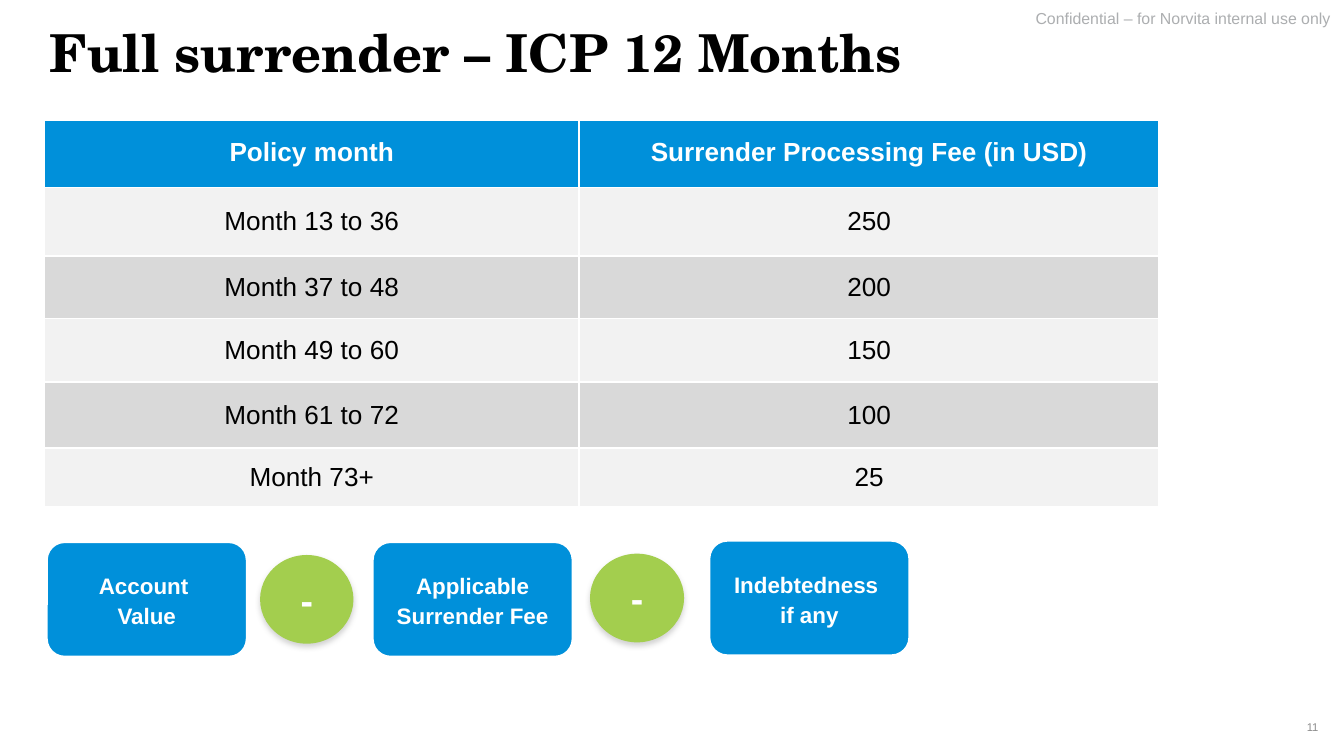
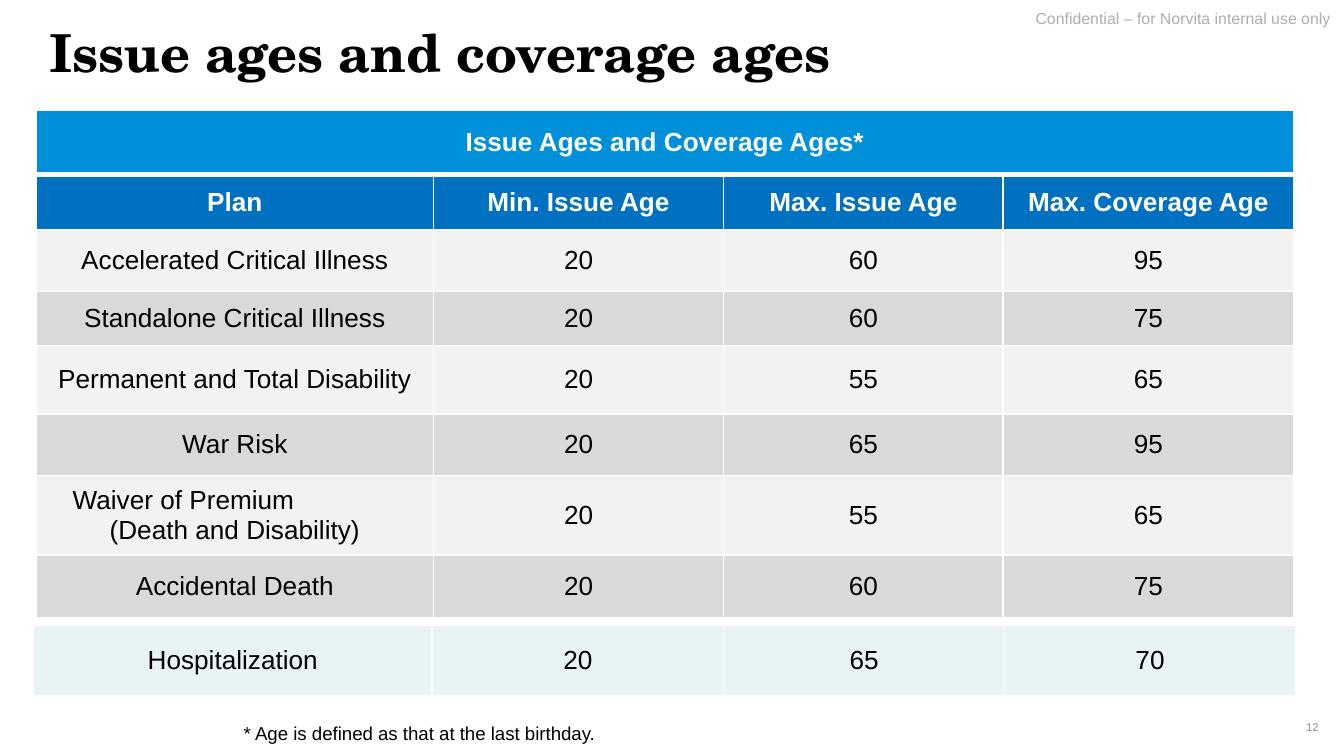
from dataclasses import dataclass
from typing import Any

from lxml.etree import SubElement
from pptx import Presentation
from pptx.dml.color import RGBColor
from pptx.enum.shapes import MSO_SHAPE
from pptx.enum.text import MSO_ANCHOR, PP_ALIGN
from pptx.oxml.ns import qn
from pptx.util import Emu, Pt

PX = 4572


@dataclass(frozen=True)
class Style:
    size: float
    color: str
    bold: bool = False
    font: str = "Arial"


@dataclass(frozen=True)
class Theme:
    blue: str = "0090DA"
    navy: str = "0070C0"
    green: str = "A3CE4E"
    white: str = "FFFFFF"
    shade: str = "808080"
    mist: str = "E7F3F4"
    bands: tuple[str, str] = ("F2F2F2", "D9D9D9")
    title: Style = Style(28, "000000", True, "TeX Gyre Schola")
    banner: Style = Style(8.5, "ACAEB0")
    number: Style = Style(6, "8C8C8C")
    note: Style = Style(10, "000000")
    head: Style = Style(14, "FFFFFF", True)
    body: Style = Style(14, "000000")
    term: Style = Style(12, "FFFFFF", True)
    sign: Style = Style(20, "FFFFFF", True)


THEME = Theme()


@dataclass(frozen=True)
class Box:
    left: int
    top: int
    width: int
    height: int

    def emu(self) -> tuple[Emu, ...]:
        return tuple(px(v) for v in (self.left, self.top, self.width, self.height))


@dataclass(frozen=True)
class Row:
    height: int
    cells: tuple[str, ...]
    fill: str
    style: Style = THEME.body
    top_line: int = 1
    bottom_line: int = 1


@dataclass(frozen=True)
class Term:
    box: Box
    text: str
    is_sign: bool = False


def px(value: int) -> Emu:
    return Emu(value * PX)


def rgb(color: str) -> RGBColor:
    return RGBColor.from_string(color)


def assign(target: Any, values: dict[str, Any]) -> None:
    for name, value in values.items():
        setattr(target, name, value)


def write(tf: Any, text: str, style: Style, align: PP_ALIGN, spacing: float = 1.0) -> None:
    for i, line in enumerate(text.split("\n")):
        p = tf.paragraphs[0] if i == 0 else tf.add_paragraph()
        assign(p, {"alignment": align, "line_spacing": spacing})
        r = p.add_run()
        r.text = line
        assign(r.font, {"name": style.font, "size": Pt(style.size), "bold": style.bold})
        r.font.color.rgb = rgb(style.color)


def set_margins(tf: Any, side: int, end: int) -> None:
    assign(tf, {"margin_left": px(side), "margin_right": px(side),
                "margin_top": px(end), "margin_bottom": px(end)})


def add_text(s: Any, box: Box, text: str, style: Style, side: int, end: int,
             align: PP_ALIGN = PP_ALIGN.LEFT, anchor: MSO_ANCHOR = MSO_ANCHOR.TOP,
             spacing: float = 1.0, wrap: bool = True) -> None:
    tf = s.shapes.add_textbox(*box.emu()).text_frame
    assign(tf, {"word_wrap": wrap, "vertical_anchor": anchor})
    set_margins(tf, side, end)
    write(tf, text, style, align, spacing)


def set_borders(cell: Any, top: int, bottom: int) -> None:
    tc_pr = cell._tc.get_or_add_tcPr()
    for side, width in {"L": 1, "R": 1, "T": top, "B": bottom}.items():
        ln = SubElement(tc_pr, qn(f"a:ln{side}"), w=str(Pt(width)))
        fill = SubElement(ln, qn("a:solidFill"))
        SubElement(fill, qn("a:srgbClr"), val=THEME.white)


def add_grid(s: Any, left: int, top: int, widths: tuple[int, ...], rows: list[Row]) -> Any:
    box = Box(left, top, sum(widths), sum(row.height for row in rows))
    table = s.shapes.add_table(len(rows), len(widths), *box.emu()).table
    assign(table, {"first_row": False, "horz_banding": False})
    for column, width in zip(table.columns, widths):
        column.width = px(width)
    for i, row in enumerate(rows):
        table.rows[i].height = px(row.height)
        for j in range(len(widths)):
            cell = table.cell(i, j)
            set_borders(cell, row.top_line, row.bottom_line)
            cell.fill.solid()
            cell.fill.fore_color.rgb = rgb(row.fill)
            cell.vertical_anchor = MSO_ANCHOR.MIDDLE
            set_margins(cell, 20, 10)
            if j < len(row.cells):
                write(cell.text_frame, row.cells[j], row.style, PP_ALIGN.CENTER)
        if len(row.cells) == 1:
            table.cell(i, 0).merge(table.cell(i, len(widths) - 1))
    return table


def banded(records: list[tuple[int, tuple[str, ...]]]) -> list[Row]:
    return [Row(height, cells, THEME.bands[i % 2])
            for i, (height, cells) in enumerate(records)]


def add_soft_shadow(sp: Any) -> None:
    effects = sp._element.spPr.find(qn("a:effectLst"))
    shadow = SubElement(effects, qn("a:outerShdw"), blurRad=str(Pt(3.1)),
                        dist=str(Pt(1.8)), dir="5400000", rotWithShape="0")
    color = SubElement(shadow, qn("a:srgbClr"), val=THEME.shade)
    SubElement(color, qn("a:alpha"), val="35000")


def add_term(s: Any, term: Term) -> None:
    kind = MSO_SHAPE.OVAL if term.is_sign else MSO_SHAPE.ROUNDED_RECTANGLE
    sp = s.shapes.add_shape(kind, *term.box.emu())
    sp.shadow.inherit = False
    sp.fill.solid()
    sp.fill.fore_color.rgb = rgb(THEME.green if term.is_sign else THEME.blue)
    tf = sp.text_frame
    assign(tf, {"word_wrap": True, "vertical_anchor": MSO_ANCHOR.MIDDLE})
    if term.is_sign:
        sp.line.fill.background()
        add_soft_shadow(sp)
        write(tf, term.text, THEME.sign, PP_ALIGN.CENTER)
    else:
        sp.line.color.rgb = rgb(THEME.white)
        sp.line.width = Pt(3)
        set_margins(tf, 0, 0)
        write(tf, term.text, THEME.term, PP_ALIGN.CENTER, 1.1)


def add_page(prs: Any, title: str, number: int) -> Any:
    s = prs.slides.add_slide(prs.slide_layouts[6])
    add_text(s, Box(1388, 16, 612, 34), "Confidential – for Norvita internal use only",
             THEME.banner, 20, 0, PP_ALIGN.RIGHT, spacing=0.9)
    add_text(s, Box(59, 33, 1518, 108), title, THEME.title, 14, 8, spacing=0.9)
    add_text(s, Box(1828, 1052, 148, 60), str(number), THEME.number, 14, 8,
             PP_ALIGN.RIGHT, MSO_ANCHOR.MIDDLE)
    return s


def surrender_slide(prs: Any) -> None:
    s = add_page(prs, "Full surrender – ICP 12 Months", 11)
    head = Row(103, ("Policy month", "Surrender Processing Fee (in USD)"),
               THEME.blue, THEME.head, top_line=3)
    fees = banded([
        (102, ("Month 13 to 36", "250")),
        (93, ("Month 37 to 48", "200")),
        (95, ("Month 49 to 60", "150")),
        (98, ("Month 61 to 72", "100")),
        (87, ("Month 73+", "25")),
    ])
    add_grid(s, 66, 176, (796, 863), [head, *fees])
    for term in (
        Term(Box(67, 804, 303, 176), "Account \nValue"),
        Term(Box(387, 826, 139, 132), "-", True),
        Term(Box(552, 804, 303, 176), "Applicable Surrender Fee"),
        Term(Box(878, 824, 140, 132), "-", True),
        Term(Box(1053, 802, 303, 176), "Indebtedness \nif any"),
    ):
        add_term(s, term)


def ages_slide(prs: Any) -> None:
    s = add_page(prs, "Issue ages and coverage ages", 12)
    heads = [
        Row(96, ("Issue Ages and Coverage Ages*",), THEME.blue, THEME.head, bottom_line=3),
        Row(82, ("Plan", "Min. Issue Age", "Max. Issue Age", "Max. Coverage Age"),
            THEME.navy, THEME.head, top_line=3),
    ]
    plans = banded([
        (92, ("Accelerated Critical Illness", "20", "60", "95")),
        (80, ("Standalone Critical Illness", "20", "60", "75")),
        (102, ("Permanent and Total Disability", "20", "55", "65")),
        (92, ("War Risk", "20", "65", "95")),
        (118, ("Waiver of Premium\n(Death and Disability)", "20", "55", "65")),
        (94, ("Accidental Death", "20", "60", "75")),
    ])
    table = add_grid(s, 54, 164, (591, 432, 416, 432), [*heads, *plans])
    waiver = table.cell(6, 0).text_frame.paragraphs[0]
    waiver.alignment = PP_ALIGN.LEFT
    waiver._p.get_or_add_pPr().set("marL", str(px(34)))
    add_text(s, Box(343, 1065, 570, 54), "* Age is defined as that at the last birthday.",
             THEME.note, 20, 10, wrap=False)
    add_grid(s, 50, 931, (593, 434, 418, 433),
             [Row(105, ("Hospitalization", "20", "65", "70"), THEME.mist)])


def main() -> None:
    prs = Presentation()
    assign(prs, {"slide_width": px(2000), "slide_height": px(1125)})
    surrender_slide(prs)
    ages_slide(prs)
    prs.save("out.pptx")


if __name__ == "__main__":
    main()
